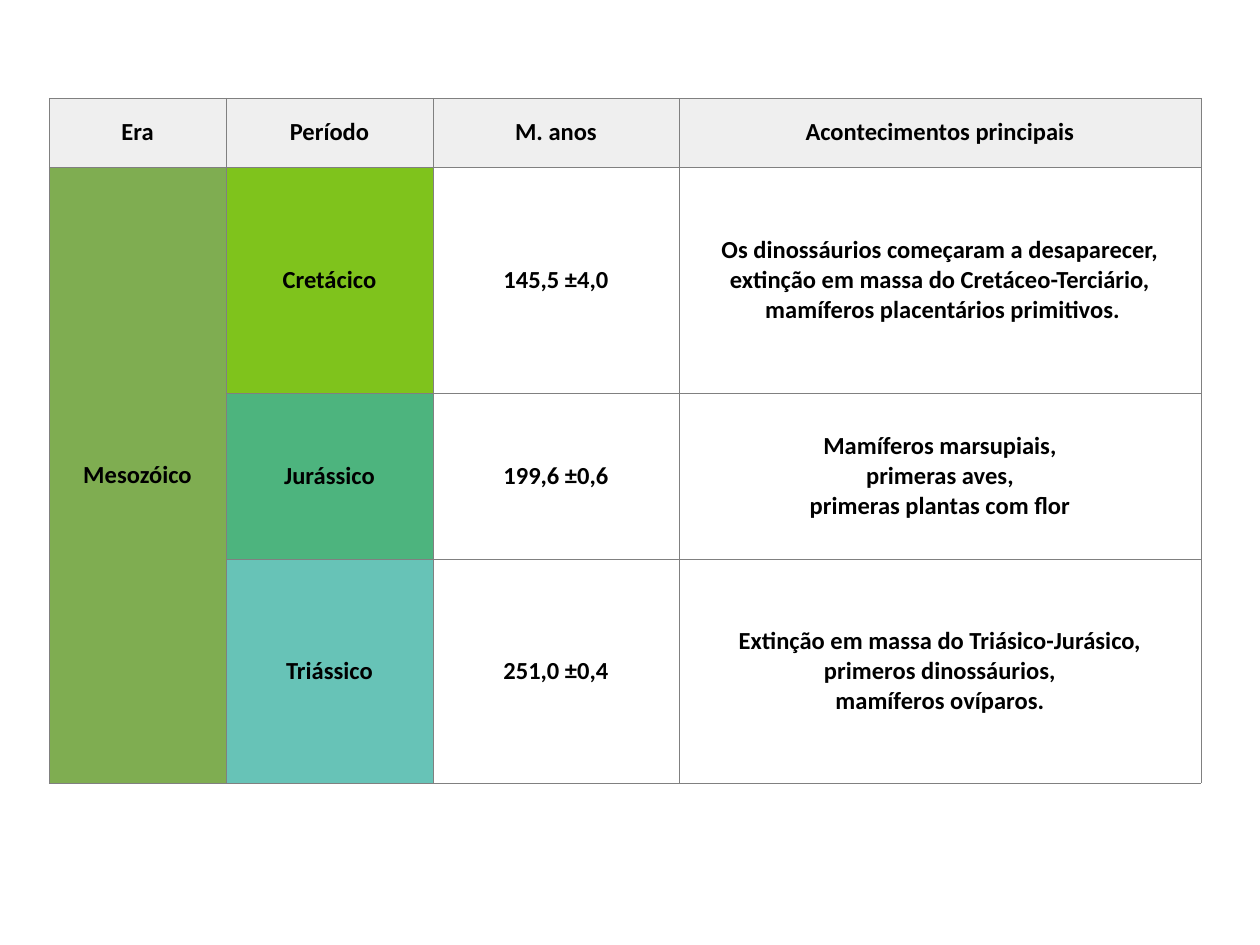
"""Builds a slide with a table of the periods of the Mesozoic era."""
import pptx
import pptx.dml.color
import pptx.enum.text
import pptx.oxml
import pptx.oxml.ns
import pptx.util

RGBColor = pptx.dml.color.RGBColor
PX = 914400 / 126
BLACK = RGBColor(0x00, 0x00, 0x00)
BORDER = RGBColor(0x80, 0x80, 0x80)
HEADER = RGBColor(0xEF, 0xEF, 0xEF)
MESOZOIC = RGBColor(0x7F, 0xAD, 0x51)
CRETACEOUS = RGBColor(0x7F, 0xC3, 0x1C)
JURASSIC = RGBColor(0x4D, 0xB4, 0x7E)
TRIASSIC = RGBColor(0x67, 0xC3, 0xB7)


def px(length):
    return pptx.util.Emu(round(length * PX))


def add_borders(cell):
    properties = cell._tc.get_or_add_tcPr()
    for side in ("lnL", "lnR", "lnT", "lnB"):
        properties.append(pptx.oxml.parse_xml(
            f'<a:{side} {pptx.oxml.ns.nsdecls("a")} w="{pptx.util.Pt(0.25)}">'
            f'<a:solidFill><a:srgbClr val="{BORDER}"/></a:solidFill></a:{side}>'))


column_widths = [177, 207, 246, 522]
row_heights = [69, 226, 166, 224]
rows = [
    ["Era", "Período", "M. anos", "Acontecimentos principais"],
    ["Mesozóico", "Cretácico", "145,5 ±4,0",
     "Os dinossáurios começaram a desaparecer,\n"
     "extinção em massa do Cretáceo-Terciário,\n"
     " mamíferos placentários primitivos."],
    ["", "Jurássico", "199,6 ±0,6",
     "Mamíferos marsupiais,\nprimeras aves,\nprimeras plantas com flor"],
    ["", "Triássico", "251,0 ±0,4",
     "Extinção em massa do Triásico-Jurásico,\n"
     "primeros dinossáurios,\nmamíferos ovíparos."],
]
fills = [[HEADER] * 4] + [
    [MESOZOIC, period, None, None] for period in (CRETACEOUS, JURASSIC, TRIASSIC)]

deck = pptx.Presentation()
deck.slide_width = px(1260)
deck.slide_height = px(945)
slide = deck.slides.add_slide(deck.slide_layouts[6])

table = slide.shapes.add_table(
    len(row_heights), len(column_widths), px(49), px(98),
    px(sum(column_widths)), px(sum(row_heights))).table
table.first_row = False
table.horz_banding = False
for column, width in zip(table.columns, column_widths):
    column.width = px(width)
for row, height in zip(table.rows, row_heights):
    row.height = px(height)

for row, texts, colors in zip(table.rows, rows, fills):
    for cell, text, color in zip(row.cells, texts, colors):
        add_borders(cell)
        if color is None:
            cell.fill.background()
        else:
            cell.fill.solid()
            cell.fill.fore_color.rgb = color
        cell.margin_left = cell.margin_right = px(1)
        cell.margin_top = cell.margin_bottom = px(1)
        cell.vertical_anchor = pptx.enum.text.MSO_ANCHOR.MIDDLE
        para = cell.text_frame.paragraphs[0]
        para.text = text.replace("\n", "\v")
        para.alignment = pptx.enum.text.PP_ALIGN.CENTER
        para.font.size = pptx.util.Pt(14)
        for span in para.runs:
            span.font.name = "Calibri"
            span.font.size = pptx.util.Pt(14)
            span.font.bold = True
            span.font.color.rgb = BLACK

table.cell(1, 0).merge(table.cell(3, 0))

deck.save("out.pptx")
